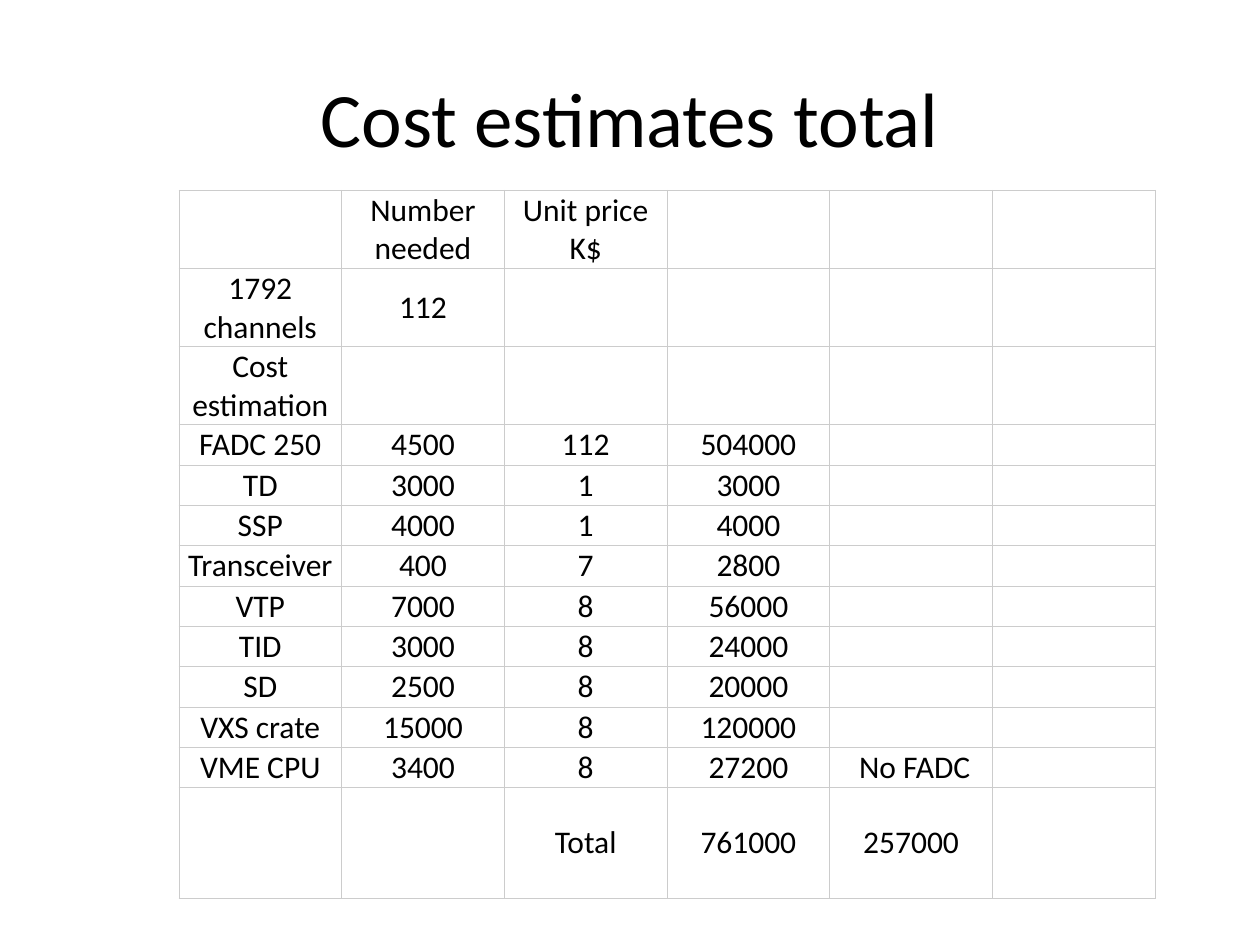
from lxml.etree import SubElement
from pptx import Presentation
from pptx.dml.color import RGBColor
from pptx.enum.text import MSO_ANCHOR, PP_ALIGN
from pptx.oxml.ns import qn
from pptx.util import Inches, Pt

COLORS = {"text": "000000", "border": "CCCCCC"}
FONT = "Calibri"
COLUMNS = 6
ROW_HEIGHTS = [0.46] * 3 + [0.31] * 9 + [0.88]
COST_ROWS = [
    ["", "Number needed", "Unit price K$"],
    ["1792 channels", "112"],
    ["Cost estimation"],
    ["FADC 250", "4500", "112", "504000"],
    ["TD", "3000", "1", "3000"],
    ["SSP", "4000", "1", "4000"],
    ["Transceiver", "400", "7", "2800"],
    ["VTP", "7000", "8", "56000"],
    ["TID", "3000", "8", "24000"],
    ["SD", "2500", "8", "20000"],
    ["VXS crate", "15000", "8", "120000"],
    ["VME CPU", "3400", "8", "27200", " No FADC"],
    ["", "", "Total", "761000", "257000"],
]


def write_centred(frame, text, size):
    para = frame.paragraphs[0]
    para.text = text
    para.alignment = PP_ALIGN.CENTER
    para.font.name = FONT
    para.font.size = Pt(size)
    para.font.color.rgb = RGBColor.from_string(COLORS["text"])


def add_title(page, left, top, width, height):
    box = page.shapes.add_textbox(Inches(left), Inches(top), Inches(width), Inches(height))
    box.text_frame.word_wrap = True
    box.text_frame.vertical_anchor = MSO_ANCHOR.MIDDLE
    write_centred(box.text_frame, "Cost estimates total", 44)


def style_cell(cell):
    """Give a cell thin borders, no fill and narrow margins."""
    properties = cell._tc.get_or_add_tcPr()
    for side in ("lnL", "lnR", "lnT", "lnB"):
        line = SubElement(properties, qn(f"a:{side}"), w=str(Pt(0.5)))
        fill = SubElement(line, qn("a:solidFill"))
        SubElement(fill, qn("a:srgbClr"), val=COLORS["border"])
    cell.fill.background()
    cell.vertical_anchor = MSO_ANCHOR.MIDDLE
    cell.margin_left = cell.margin_right = Inches(0.02)
    cell.margin_top = cell.margin_bottom = Inches(0.01)


def add_cost_table(page, left, top, width, height):
    frame = page.shapes.add_table(len(COST_ROWS), COLUMNS, Inches(left), Inches(top),
                                  Inches(width), Inches(height))
    table = frame.table
    table.first_row = table.horz_banding = False
    for row, row_height, texts in zip(table.rows, ROW_HEIGHTS, COST_ROWS):
        row.height = Inches(row_height)
        for index, cell in enumerate(row.cells):
            style_cell(cell)
            text = texts[index] if index < len(texts) else ""
            write_centred(cell.text_frame, text, 18)


def main():
    deck = Presentation()
    deck.slide_width, deck.slide_height = Inches(10), Inches(7.5)
    page = deck.slides.add_slide(deck.slide_layouts[6])
    add_title(page, 0.5, 0.3, 9, 1.25)
    add_cost_table(page, 1.42, 1.51, 7.75, sum(ROW_HEIGHTS))
    deck.save("out.pptx")


if __name__ == "__main__":
    main()
